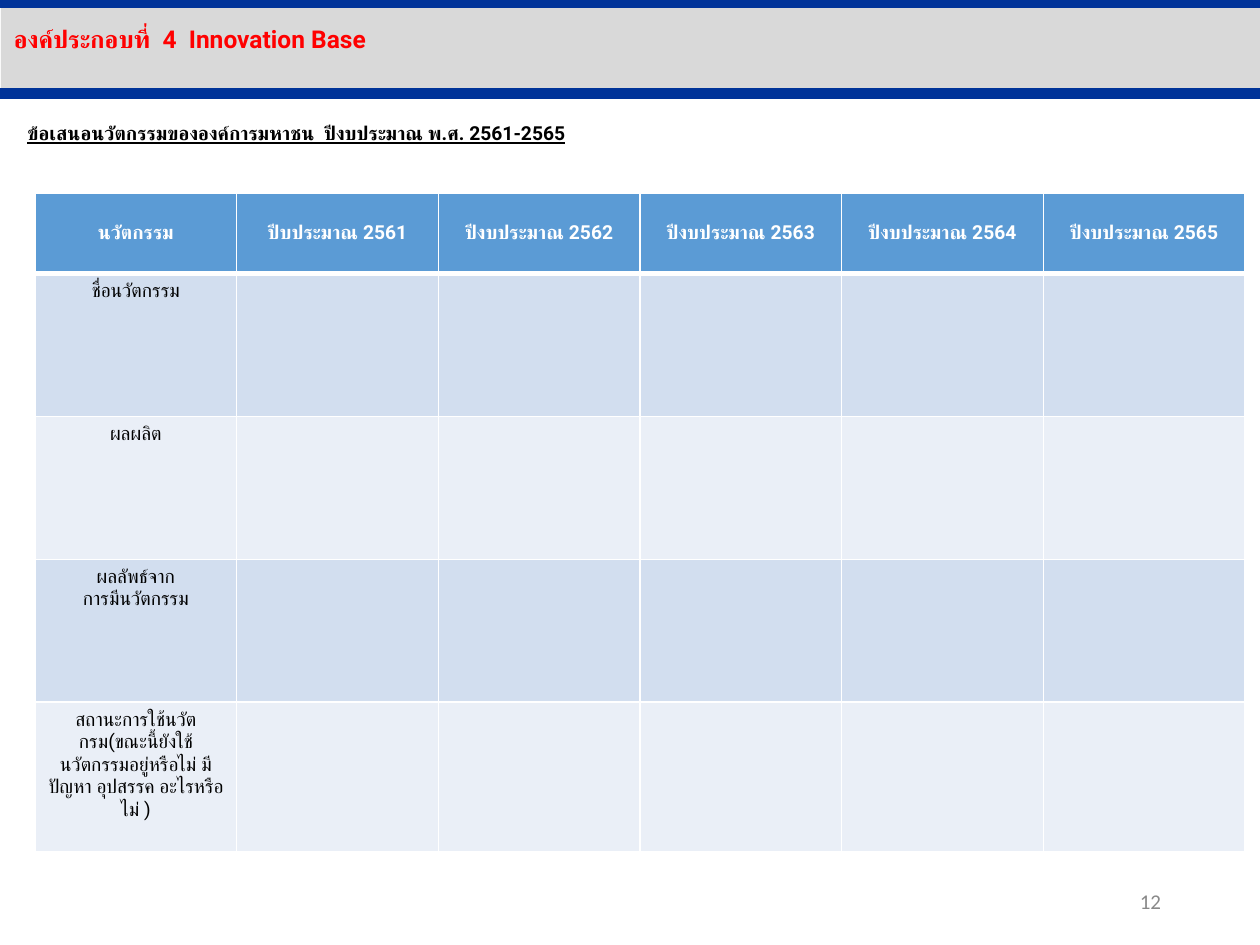
"""Build the Innovation Base slide with its five-year proposal table."""
from dataclasses import dataclass

from lxml import etree
from pptx import Presentation
from pptx.dml.color import RGBColor
from pptx.enum.shapes import MSO_CONNECTOR, MSO_SHAPE
from pptx.enum.text import MSO_ANCHOR, PP_ALIGN
from pptx.oxml.ns import qn
from pptx.slide import Slide
from pptx.util import Pt

LEFT, CENTER, RIGHT = PP_ALIGN.LEFT, PP_ALIGN.CENTER, PP_ALIGN.RIGHT
TOP, MIDDLE = MSO_ANCHOR.TOP, MSO_ANCHOR.MIDDLE
RECT, STRAIGHT = MSO_SHAPE.RECTANGLE, MSO_CONNECTOR.STRAIGHT
TITLE_ONLY = 5

COLORS = {
    "band": "D9D9D9",
    "rule": "003399",
    "title": "FF0000",
    "text": "000000",
    "number": "898989",
    "white": "FFFFFF",
    "header": "5B9BD5",
    "odd": "D2DEEF",
    "even": "EAEFF7",
}
YEARS = ["ปีบประมาณ 2561"] + [f"ปีงบประมาณ {year}" for year in range(2562, 2566)]
ROWS = [
    "ชื่อนวัตกรรม",
    "ผลผลิต",
    "ผลลัพธ์จาก\nการมีนวัตกรรม",
    "สถานะการใช้นวัตกรม(ขณะนี้ยังใช้นวัตกรรมอยู่หรือไม่ มีปัญหา อุปสรรค อะไรหรือไม่ )",
]


def rgb(name):
    return RGBColor.from_string(COLORS[name])


def write(tf, text, size=11, color="text", font="Roboto", bold=False,
          underline=False, align=LEFT):
    p = tf.paragraphs[0]
    p.text = text
    p.alignment = align
    for r in p.runs:
        r.font.name = font
        r.font.size = Pt(size)
        r.font.bold = bold
        r.font.underline = underline
        r.font.color.rgb = rgb(color)
        cs = etree.SubElement(r.font._element, qn("a:cs"))
        cs.set("typeface", font)


def set_borders(cell, bottom):
    tcPr = cell._tc.get_or_add_tcPr()
    widths = {"lnL": 1, "lnR": 1, "lnT": 1, "lnB": bottom}
    for i, (side, width) in enumerate(widths.items()):
        ln = etree.Element(qn(f"a:{side}"), w=str(Pt(width)))
        fill = etree.SubElement(ln, qn("a:solidFill"))
        etree.SubElement(fill, qn("a:srgbClr"), val=COLORS["white"])
        tcPr.insert(i, ln)


@dataclass
class SlideBuilder:
    """Hold the current slide and the style of its rules."""
    s: Slide
    rule_width: float = 6
    rule_color: str = "rule"

    def band(self, x, y, w, h, color):
        sp = self.s.shapes.add_shape(RECT, Pt(x), Pt(y), Pt(w), Pt(h))
        sp.shadow.inherit = False
        sp.fill.solid()
        sp.fill.fore_color.rgb = rgb(color)
        sp.line.fill.background()

    def rule(self, y, w):
        cxn = self.s.shapes.add_connector(STRAIGHT, 0, Pt(y), Pt(w), Pt(y))
        cxn.line.width = Pt(self.rule_width)
        cxn.line.color.rgb = rgb(self.rule_color)
        etree.SubElement(cxn._element.spPr, qn("a:effectLst"))

    def title(self, x, y, w, h, text, **style):
        sp = self.s.shapes.title
        sp.left, sp.top, sp.width, sp.height = Pt(x), Pt(y), Pt(w), Pt(h)
        sp.text_frame.vertical_anchor = TOP
        write(sp.text_frame, text, **style)
        sp._element.getparent().append(sp._element)

    def text(self, x, y, w, h, text, anchor=TOP, **style):
        sp = self.s.shapes.add_textbox(Pt(x), Pt(y), Pt(w), Pt(h))
        tf = sp.text_frame
        tf.word_wrap = True
        tf.vertical_anchor = anchor
        write(tf, text, **style)

    def table(self, x, y, col_width, heights, data):
        cols = len(data[0])
        frame = self.s.shapes.add_table(len(data), cols, Pt(x), Pt(y),
                                        Pt(col_width * cols), Pt(sum(heights)))
        table = frame.table
        for col in table.columns:
            col.width = Pt(col_width)
        for i, (values, height) in enumerate(zip(data, heights)):
            table.rows[i].height = Pt(height)
            header = i == 0
            fill = "header" if header else ("even", "odd")[i % 2]
            for cell, value in zip(table.rows[i].cells, values):
                cell.fill.solid()
                cell.fill.fore_color.rgb = rgb(fill)
                cell.vertical_anchor = MIDDLE if header else TOP
                set_borders(cell, 3 if header else 1)
                if value:
                    write(cell.text_frame, value, bold=header, align=CENTER,
                          color="white" if header else "text")


def main():
    prs = Presentation()
    prs.slide_width, prs.slide_height = Pt(720), Pt(540)
    slide = SlideBuilder(prs.slides.add_slide(prs.slide_layouts[TITLE_ONLY]))

    slide.band(0.5, 3.6, 719.5, 49, "band")
    for y in (53.5, 1.5):
        slide.rule(y, 720)
    slide.text(508.5, 500.5, 162, 28.75, "12", size=12, color="number",
               font="Calibri", align=RIGHT, anchor=MIDDLE)
    slide.title(0.7, 10, 698, 24.5, "องค์ประกอบที่  4  Innovation Base",
                size=14, color="title", bold=True)
    slide.text(8.6, 66, 710, 21,
               "ข้อเสนอนวัตกรรมขององค์การมหาชน  ปีงบประมาณ พ.ศ. 2561-2565",
               bold=True, underline=True)
    data = [["นวัตกรรม"] + YEARS] + [[name] + [""] * len(YEARS) for name in ROWS]
    slide.table(20, 110.2, 115.25, [46, 81.7, 81.7, 81.7, 85.7], data)
    prs.save("out.pptx")


if __name__ == "__main__":
    main()
